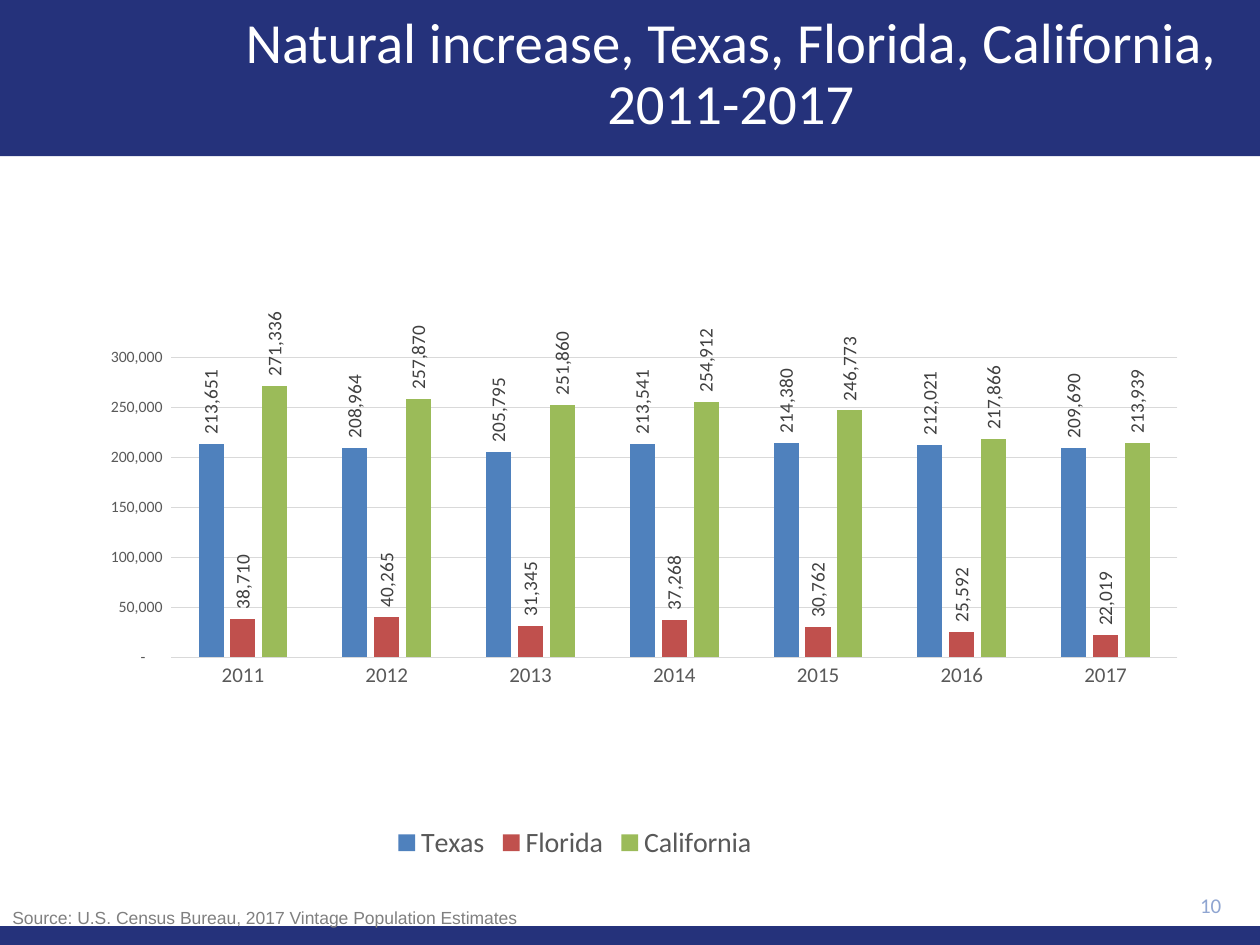
from lxml import etree
from pptx import Presentation
from pptx import util as u
from pptx.chart import data as cd
from pptx.dml.color import RGBColor
from pptx.enum import chart as ch, shapes, text
from pptx.oxml import ns

NAVY = RGBColor(0x25, 0x32, 0x7B)
WHITE = RGBColor(0xFF, 0xFF, 0xFF)
PALE = RGBColor(0x8F, 0xA5, 0xD1)
GRAY = RGBColor(0x80, 0x80, 0x80)
SLATE = RGBColor(0x59, 0x59, 0x59)
DARK = RGBColor(0x40, 0x40, 0x40)
RULE = RGBColor(0xD9, 0xD9, 0xD9)
BLUE = RGBColor(0x4F, 0x81, 0xBD)
RED = RGBColor(0xC0, 0x50, 0x4D)
GREEN = RGBColor(0x9B, 0xBB, 0x59)

COUNT = '_(* #,##0_);_(* \\(#,##0\\);_(* "-"??_);_(@_)'
YEARS = [str(year) for year in range(2011, 2018)]
STATES = [
    ("Texas", BLUE, (213651, 208964, 205795, 213541, 214380, 212021, 209690)),
    ("Florida", RED, (38710, 40265, 31345, 37268, 30762, 25592, 22019)),
    ("California", GREEN, (271336, 257870, 251860, 254912, 246773, 217866, 213939)),
]


class Deck:
    """Holds the style and the current slide, and draws each kind of element."""

    face = "Calibri"

    def __init__(self, wide, high):
        self.prs = Presentation()
        self.prs.slide_width, self.prs.slide_height = u.Cm(wide), u.Cm(high)
        self.slide = self.prs.slides.add_slide(self.prs.slide_layouts[6])

    def style(self, font, size, color, face=None):
        font.size, font.name = u.Pt(size), face or self.face
        font.color.rgb = color

    def band(self, *box):
        bar = self.slide.shapes.add_shape(shapes.MSO_SHAPE.RECTANGLE, *map(u.Cm, box))
        bar.shadow.inherit = False
        bar.fill.solid()
        bar.fill.fore_color.rgb = NAVY
        bar.line.fill.background()

    def label(self, words, box, size, color, align, face=None, wrap=True,
              anchor=text.MSO_ANCHOR.MIDDLE, space=None):
        frame = self.slide.shapes.add_textbox(*map(u.Cm, box)).text_frame
        frame.word_wrap, frame.vertical_anchor = wrap, anchor
        frame.text = words
        para = frame.paragraphs[0]
        para.alignment, para.line_spacing = align, space
        self.style(para.runs[0].font, size, color, face)

    def columns(self, box, years, states, inner):
        data = cd.CategoryChartData(number_format=COUNT)
        data.categories = years
        for name, _, counts in states:
            data.add_series(name, counts)
        kind = ch.XL_CHART_TYPE.COLUMN_CLUSTERED
        chart = self.slide.shapes.add_chart(kind, *map(u.Cm, box), data).chart
        chart.has_title = False
        self.style(chart.font, 10, DARK)
        chart.has_legend = True
        chart.legend.position = ch.XL_LEGEND_POSITION.BOTTOM
        chart.legend.include_in_layout = False
        self.style(chart.legend.font, 16, SLATE)
        self.axes(chart)
        plot = chart.plots[0]
        plot.gap_width, plot.overlap, plot.vary_by_categories = 219, -27, False
        for series, (_, color, _) in zip(plot.series, states):
            self.series(series, color)
        self.place(chart, inner)

    def axes(self, chart):
        for axis, size in ((chart.category_axis, 12), (chart.value_axis, 9)):
            axis.major_tick_mark = axis.minor_tick_mark = ch.XL_TICK_MARK.NONE
            self.style(axis.tick_labels.font, size, SLATE)
        chart.category_axis.has_major_gridlines = False
        value = chart.value_axis
        value.minimum_scale, value.maximum_scale, value.major_unit = 0, 300000, 50000
        value.tick_labels.number_format = COUNT
        value.tick_labels.number_format_is_linked = False
        value.format.line.fill.background()
        for part in (chart.category_axis, value.major_gridlines):
            part.format.line.color.rgb = RULE
            part.format.line.width = u.Pt(0.75)

    def series(self, series, color):
        series.format.fill.solid()
        series.format.fill.fore_color.rgb = color
        series.invert_if_negative = False
        marks = series.data_labels
        marks.show_value = True
        marks.position = ch.XL_LABEL_POSITION.OUTSIDE_END
        marks.number_format, marks.number_format_is_linked = COUNT, False
        self.style(marks.font, 11, DARK)
        body = marks._element.find(".//" + ns.qn("a:bodyPr"))
        body.set("rot", "-5400000")
        body.set("vert", "horz")

    def place(self, chart, inner):
        area = chart._chartSpace.find(".//" + ns.qn("c:plotArea"))
        for old in area.findall(ns.qn("c:layout")):
            area.remove(old)
        frame = etree.Element(ns.qn("c:layout"))
        area.insert(0, frame)
        manual = etree.SubElement(frame, ns.qn("c:manualLayout"))
        rules = [("layoutTarget", "inner"), ("xMode", "edge"), ("yMode", "edge")]
        for tag, val in rules + list(zip("xywh", inner)):
            etree.SubElement(manual, ns.qn("c:" + tag)).set("val", str(val))


def main():
    left, mid, right = text.PP_ALIGN.LEFT, text.PP_ALIGN.CENTER, text.PP_ALIGN.RIGHT
    deck = Deck(25.4, 19.05)
    deck.band(0, 0, 25.4, 3.15)
    deck.band(0, 18.67, 25.4, 0.38)
    deck.label("Natural increase, Texas, Florida, California, 2011-2017",
               (4.32, 0.25, 20.83, 2.54), 32.4, WHITE, mid, space=0.9)
    deck.label("10", (22.61, 17.81, 2.26, 0.86), 12, PALE, right)
    deck.columns((-0.56, 2.79, 24.31, 14.66), YEARS, STATES, (0.165, 0.301, 0.835, 0.413))
    deck.label("Source: U.S. Census Bureau, 2017 Vintage Population Estimates",
               (0, 18.16, 11.05, 0.69), 10, GRAY, left, "Arial", False,
               text.MSO_ANCHOR.TOP)
    deck.prs.save("out.pptx")


if __name__ == "__main__":
    main()
